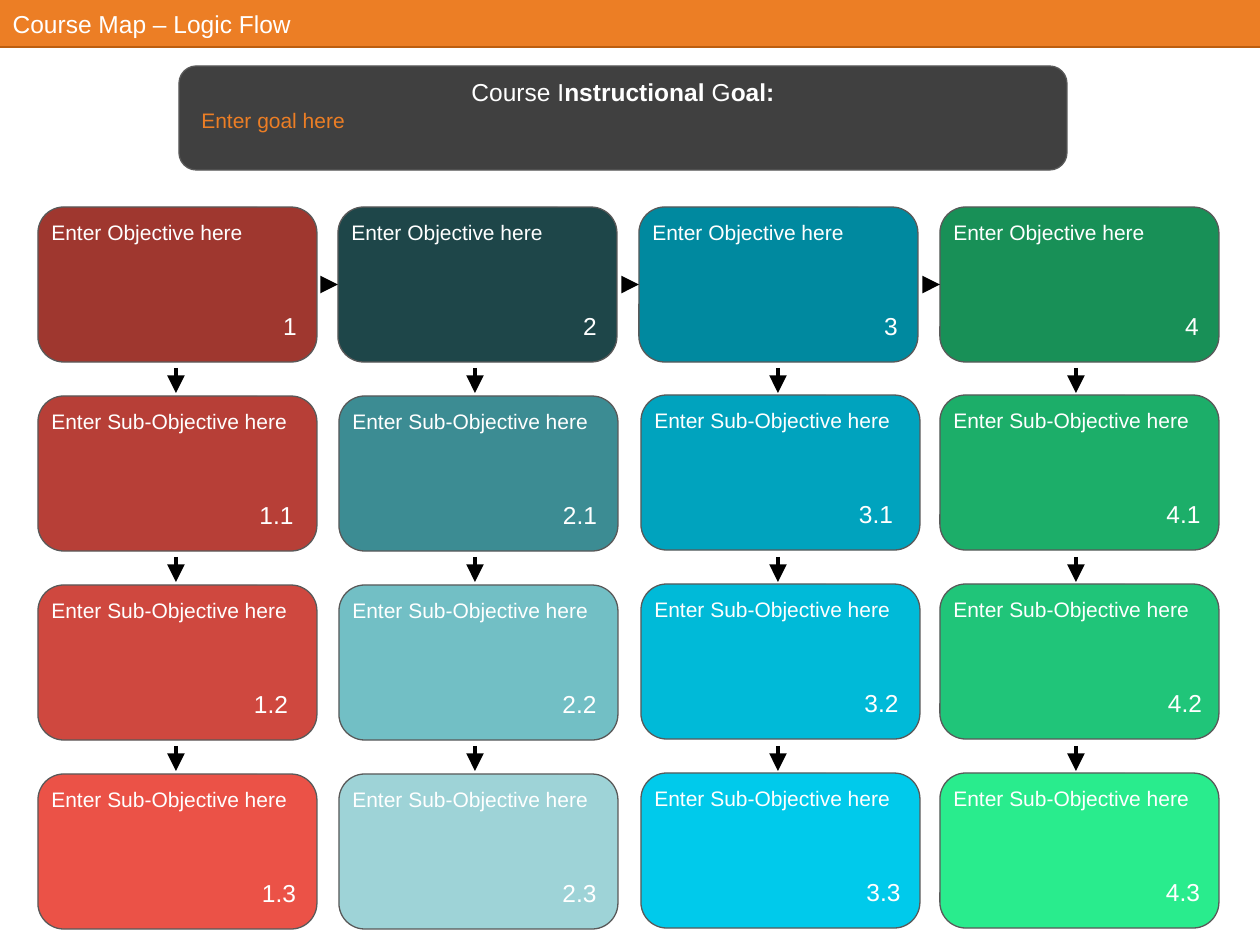
from collections import namedtuple

from lxml.etree import SubElement
from pptx import Presentation
from pptx.dml.color import RGBColor
from pptx.enum.shapes import MSO_CONNECTOR as Connector, MSO_SHAPE as Shape
from pptx.enum.text import MSO_ANCHOR as Anchor, MSO_AUTO_SIZE as AutoSize, PP_ALIGN as Align
from pptx.oxml.ns import qn
from pptx.util import Emu, Pt

PX_PER_INCH = 126
FONT = "Arial"
WHITE = RGBColor(0xFF, 0xFF, 0xFF)
BLACK = RGBColor(0x00, 0x00, 0x00)
ORANGE = RGBColor(0xEC, 0x7E, 0x25)
DARK_ORANGE = RGBColor(0xBC, 0x5E, 0x10)
CHARCOAL = RGBColor(0x40, 0x40, 0x40)
BORDER = RGBColor(0x59, 0x59, 0x59)
REDS = [RGBColor.from_string(c) for c in ("9F372F", "B73F37", "CF483F", "EB5247")]
TEALS = [RGBColor.from_string(c) for c in ("1E4649", "3C8C93", "72BFC5", "9ED3D7")]
BLUES = [RGBColor.from_string(c) for c in ("00899F", "00A3BE", "00BAD8", "00CAEB")]
GREENS = [RGBColor.from_string(c) for c in ("189057", "1CAE69", "20C579", "29EC8D")]

CARD_WIDTH, CARD_HEIGHT = 279, 155
OBJECTIVE_TOP = 207
ROW_STEP = 189
ARROW_TOP, ARROW_LENGTH = 368, 25

Column = namedtuple("Column", "left sub_left sub_top arrow_x colours number_widths")
COLUMNS = [
    Column(38, 38, 396, 176, REDS, (50, 77, 88, 72)),
    Column(338, 339, 396, 475, TEALS, (50, 72, 73, 73)),
    Column(639, 641, 395, 778, BLUES, (50, 84, 73, 69)),
    Column(940, 940, 395, 1076, GREENS, (50, 67, 64, 68)),
]


def px(value):
    return Emu(round(value * 914400 / PX_PER_INCH))


def box(*lengths):
    return [px(length) for length in lengths]


def format_runs(paragraph, size, colour):
    for run in paragraph.runs:
        run.font.name = FONT
        run.font.size = Pt(size)
        run.font.color.rgb = colour


def add_block(shapes, kind, bounds, fill, border=None):
    shape = shapes.add_shape(kind, *box(*bounds))
    shape.shadow.inherit = False
    shape.fill.solid()
    shape.fill.fore_color.rgb = fill
    if border is None:
        shape.line.fill.background()
    else:
        shape.line.color.rgb = border
        shape.line.width = Pt(0.75)
    return shape


def add_text(shapes, bounds, text, size, colour, align=Align.LEFT, anchor=Anchor.TOP):
    frame = shapes.add_textbox(*box(*bounds)).text_frame
    frame.word_wrap = True
    frame.vertical_anchor = anchor
    frame.text = text
    frame.paragraphs[0].alignment = align
    format_runs(frame.paragraphs[0], size, colour)


def add_line(slide, start, end, colour, width):
    line = slide.shapes.add_connector(Connector.STRAIGHT, *box(*start, *end))
    line.line.color.rgb = colour
    line.line.width = Pt(width)
    SubElement(line.element.spPr, qn("a:effectLst"))
    return line


def add_arrow(slide, start, end):
    arrow = add_line(slide, start, end, BLACK, 2)
    SubElement(arrow.line._get_or_add_ln(), qn("a:tailEnd"), type="triangle", w="lg", len="lg")
    return arrow


def add_header(slide):
    bar = add_block(slide.shapes, Shape.RECTANGLE, (0, 0, 1260, 47), ORANGE)
    add_line(slide, (0, 47), (1260, 47), DARK_ORANGE, 1.5)
    title = slide.shapes.title
    title.left, title.top, title.width, title.height = bar.left, bar.top, bar.width, bar.height
    frame = title.text_frame
    frame.text = "Course Map – Logic Flow"
    frame.auto_size = AutoSize.NONE
    frame.vertical_anchor = Anchor.MIDDLE
    frame.paragraphs[0].alignment = Align.LEFT
    format_runs(frame.paragraphs[0], 14, WHITE)
    bar.element.addnext(title.element)


def add_goal(slide):
    panel = add_block(slide.shapes, Shape.ROUNDED_RECTANGLE, (179, 66, 888, 104), CHARCOAL, BORDER)
    panel.text_frame.vertical_anchor = Anchor.TOP
    paragraph = panel.text_frame.paragraphs[0]
    paragraph.alignment = Align.CENTER
    for text, bold in (("Course I", False), ("nstructional ", True), ("G", False), ("oal:", True)):
        run = paragraph.add_run()
        run.text = text
        run.font.bold = bold
    format_runs(paragraph, 14, WHITE)
    add_text(slide.shapes, (189, 101, 871, 63), "Enter goal here", 12, ORANGE)


def add_card(slide, left, top, colour, label, number, number_width):
    shapes = slide.shapes.add_group_shape().shapes
    card = add_block(shapes, Shape.ROUNDED_RECTANGLE,
                     (left, top, CARD_WIDTH, CARD_HEIGHT), colour, BORDER)
    number_left = left + CARD_WIDTH - 2 - number_width
    add_text(shapes, (number_left, top + 97, number_width, 43), number, 14, WHITE,
             Align.CENTER, Anchor.MIDDLE)
    add_text(shapes, (left + 1, top + 6, CARD_WIDTH, 140), label, 12, WHITE)
    return card


def add_column(slide, index, column):
    objective = add_card(slide, column.left, OBJECTIVE_TOP, column.colours[0],
                         "Enter Objective here", str(index), column.number_widths[0])
    for row in range(1, len(column.colours)):
        offset = (row - 1) * ROW_STEP
        add_card(slide, column.sub_left, column.sub_top + offset, column.colours[row],
                 "Enter Sub-Objective here", f"{index}.{row}", column.number_widths[row])
        arrow_top = ARROW_TOP + offset
        add_arrow(slide, (column.arrow_x, arrow_top), (column.arrow_x, arrow_top + ARROW_LENGTH))
    return objective


def main():
    presentation = Presentation()
    presentation.slide_width, presentation.slide_height = box(1260, 945)
    slide = presentation.slides.add_slide(presentation.slide_layouts[5])
    add_header(slide)
    add_goal(slide)
    objectives = [add_column(slide, index, column) for index, column in enumerate(COLUMNS, 1)]
    middle = OBJECTIVE_TOP + CARD_HEIGHT / 2
    for column, objective in zip(COLUMNS[1:], objectives[1:]):
        arrow = add_arrow(slide, (column.left - 16, middle), (column.left, middle))
        arrow.end_connect(objective, 1)
    presentation.save("out.pptx")


if __name__ == "__main__":
    main()
